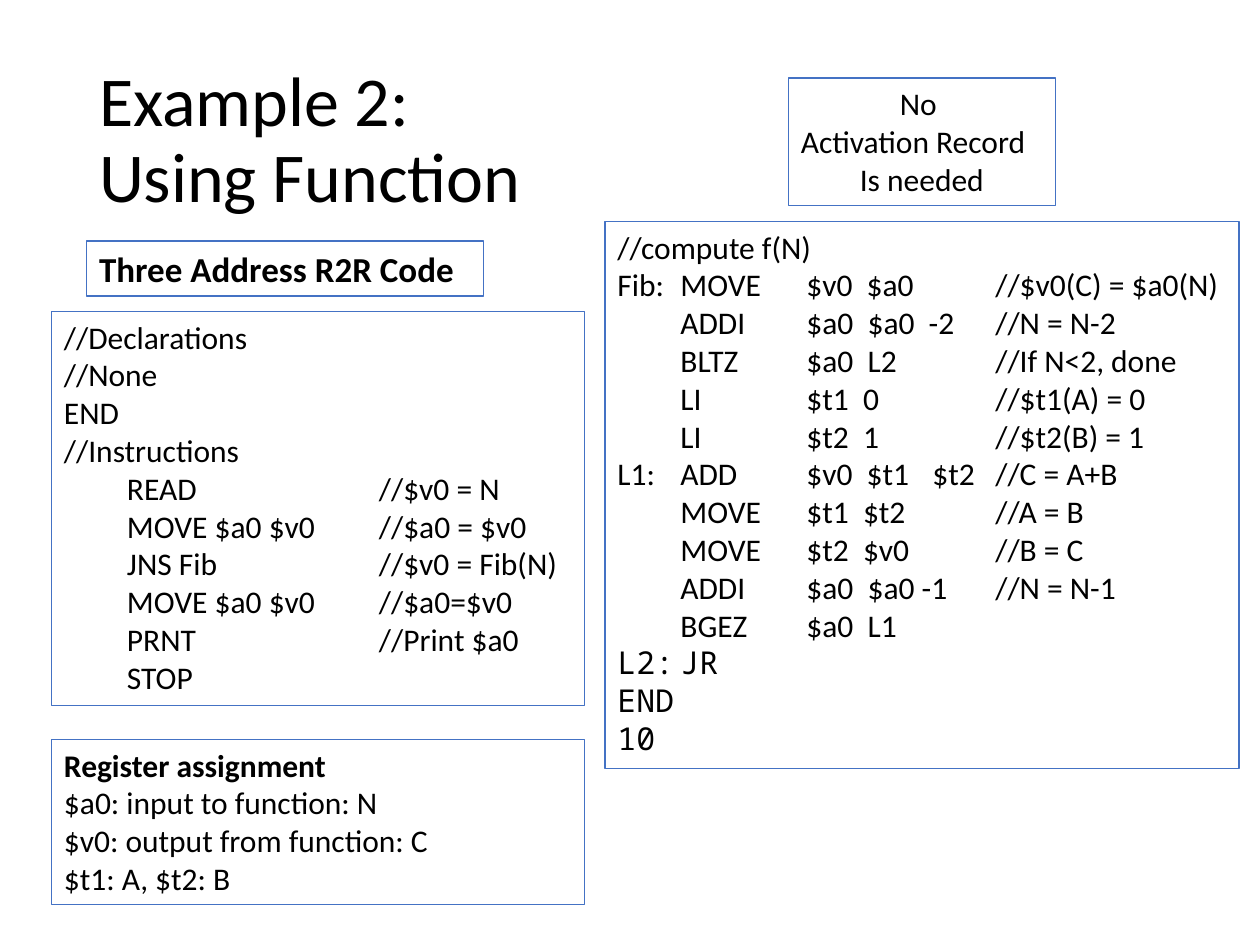
import pptx
import pptx.dml.color
import pptx.enum.shapes
import pptx.enum.text
import pptx.oxml.ns
import pptx.util
from lxml import etree

Pt = pptx.util.Pt
ALIGN = pptx.enum.text.PP_ALIGN
ANCHOR = pptx.enum.text.MSO_ANCHOR
BLACK = pptx.dml.color.RGBColor(0x00, 0x00, 0x00)
BLUE = pptx.dml.color.RGBColor(0x44, 0x72, 0xC4)
BODY_FONT = "Calibri"
CODE_FONT = "Noto Sans Mono"
TAB_STEP = 36
TAB_COUNT = 7

TITLE = "Example 2: \vUsing Function"
NOTE = ["No ", "Activation Record", "Is needed"]
MAIN_CODE = [
    "//Declarations",
    "//None",
    "END",
    "//Instructions",
    "\tREAD\t\t\t//$v0 = N",
    "\tMOVE $a0 $v0\t\t//$a0 = $v0",
    "\tJNS Fib\t\t\t//$v0 = Fib(N)",
    "\tMOVE $a0 $v0\t\t//$a0=$v0",
    "\tPRNT\t\t\t//Print $a0",
    "\tSTOP",
]
REGISTERS = [
    "Register assignment",
    "$a0: input to function: N",
    "$v0: output from function: C",
    "$t1: A, $t2: B",
]
FUNCTION_CODE = [
    "//compute f(N)",
    "Fib: \tMOVE \t$v0  $a0\t\t//$v0(C) = $a0(N)",
    "\tADDI \t$a0  $a0  -2\t//N = N-2",
    "\tBLTZ \t$a0  L2\t\t//If N<2, done",
    "\tLI \t\t$t1  0\t\t//$t1(A) = 0",
    "\tLI \t\t$t2  1\t\t//$t2(B) = 1",
    "L1:\tADD  \t$v0  $t1\t$t2\t//C = A+B",
    "\tMOVE \t$t1  $t2\t\t//A = B",
    "\tMOVE \t$t2  $v0\t\t//B = C",
    "\tADDI \t$a0  $a0 -1\t//N = N-1",
    "\tBGEZ \t$a0  L1",
    "L2:\tJR",
    "END",
    "10",
]


def format_paragraph(paragraph, size, bold=False, font=BODY_FONT):
    """Style every run of a paragraph."""
    for run in paragraph.runs:
        run.font.name = font
        run.font.size = Pt(size)
        run.font.bold = bold
        run.font.color.rgb = BLACK


def add_tab_stops(paragraph):
    """Set evenly spaced left tab stops on a paragraph."""
    properties = paragraph._p.get_or_add_pPr()
    tab_list = etree.SubElement(properties, pptx.oxml.ns.qn("a:tabLst"))
    for number in range(1, TAB_COUNT + 1):
        tab = etree.SubElement(tab_list, pptx.oxml.ns.qn("a:tab"))
        tab.set("pos", str(Pt(TAB_STEP * number)))
        tab.set("algn", "l")


def add_title(slide, left, top, width, height):
    """Place the two-line slide title."""
    text_box = slide.shapes.add_textbox(Pt(left), Pt(top), Pt(width), Pt(height))
    text_frame = text_box.text_frame
    text_frame.word_wrap = True
    text_frame.vertical_anchor = ANCHOR.MIDDLE
    text_frame.text = TITLE
    text_frame.paragraphs[0].line_spacing = 0.9
    format_paragraph(text_frame.paragraphs[0], 40)


def add_outlined_box(slide, box, lines, size=18):
    """Place an outlined rectangle of text lines and return its paragraphs."""
    left, top, width, height = box
    shape = slide.shapes.add_shape(
        pptx.enum.shapes.MSO_SHAPE.RECTANGLE, Pt(left), Pt(top), Pt(width), Pt(height)
    )
    shape.shadow.inherit = False
    shape.fill.background()
    shape.line.color.rgb = BLUE
    shape.line.width = Pt(0.75)
    text_frame = shape.text_frame
    text_frame.word_wrap = True
    text_frame.vertical_anchor = ANCHOR.TOP
    text_frame.text = "\n".join(lines)
    for paragraph in text_frame.paragraphs:
        paragraph.alignment = ALIGN.LEFT
        format_paragraph(paragraph, size)
    return text_frame.paragraphs


def add_note(slide, *box):
    """Place the remark about the activation record."""
    first, _, last = add_outlined_box(slide, box, NOTE)
    first.alignment = last.alignment = ALIGN.CENTER


def add_heading(slide, *box):
    """Place the bold heading above the main code."""
    paragraphs = add_outlined_box(slide, box, ["Three Address R2R Code"], 20)
    format_paragraph(paragraphs[0], 20, bold=True)


def add_code(slide, lines, mono_count, *box):
    """Place a tabbed code listing whose last lines are monospaced."""
    paragraphs = add_outlined_box(slide, box, lines)
    for paragraph in paragraphs:
        add_tab_stops(paragraph)
    for paragraph in paragraphs[len(paragraphs) - mono_count:]:
        format_paragraph(paragraph, 18, font=CODE_FONT)


def add_registers(slide, *box):
    """Place the register assignment under its bold heading."""
    paragraphs = add_outlined_box(slide, box, REGISTERS)
    format_paragraph(paragraphs[0], 18, bold=True)


def main():
    """Build and save the slide."""
    presentation = pptx.Presentation()
    presentation.slide_width = Pt(720)
    presentation.slide_height = Pt(540)
    slide = presentation.slides.add_slide(presentation.slide_layouts[6])
    add_title(slide, 49.5, 28.8, 620.6, 104.4)
    add_note(slide, 450.5, 44.6, 152.6, 72.7)
    add_code(slide, MAIN_CODE, 0, 29.5, 178, 304.5, 225.2)
    add_heading(slide, 49.5, 137.7, 226.8, 31.5)
    add_registers(slide, 29.5, 422.6, 304.5, 94.4)
    add_code(slide, FUNCTION_CODE, 3, 345.7, 126.6, 362.3, 312.6)
    presentation.save("out.pptx")


if __name__ == "__main__":
    main()
